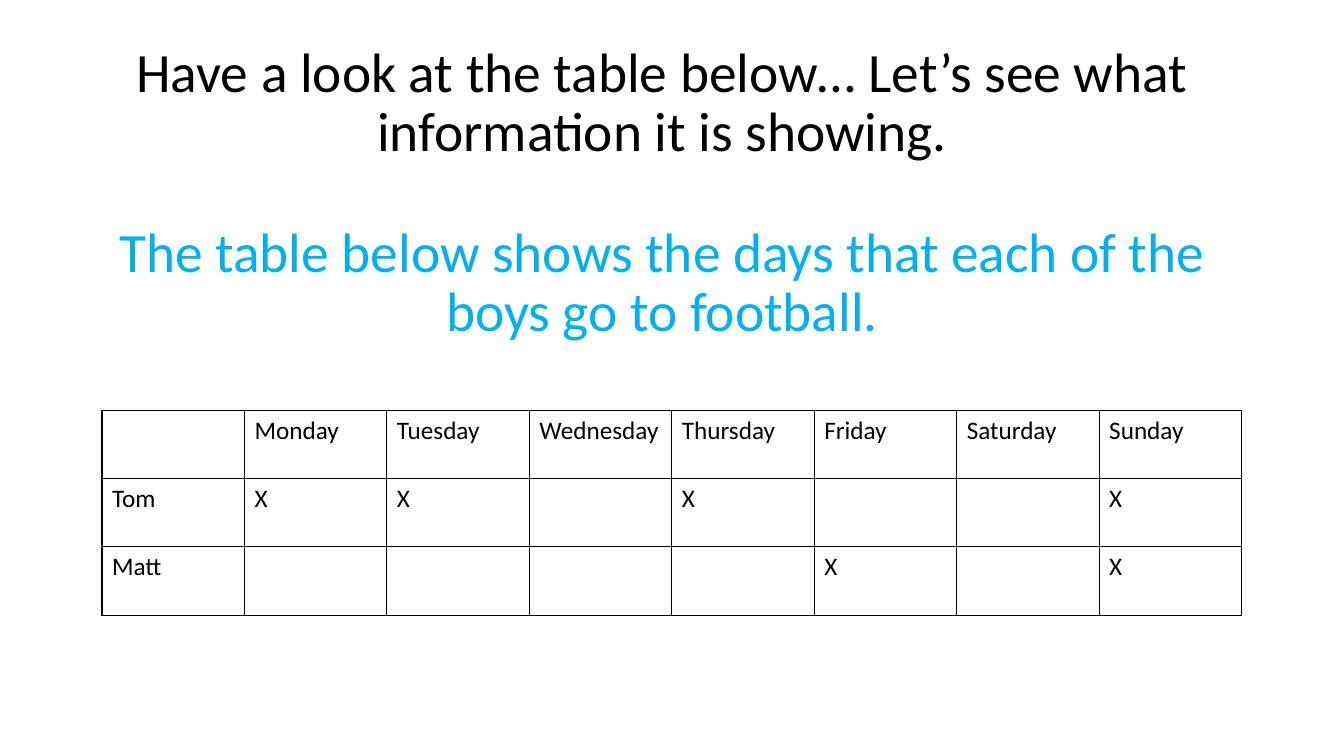
from lxml.etree import SubElement
from pptx import Presentation
from pptx.dml.color import RGBColor
from pptx.enum.text import MSO_ANCHOR, PP_ALIGN
from pptx.oxml.ns import qn
from pptx.util import Cm, Pt

BLACK = RGBColor(0x00, 0x00, 0x00)
SKY_BLUE = RGBColor(0x00, 0xB0, 0xF0)

DAYS = ["Monday", "Tuesday", "Wednesday", "Thursday", "Friday", "Saturday", "Sunday"]
FOOTBALL_DAYS = {
    "Tom": {"Monday", "Tuesday", "Thursday", "Sunday"},
    "Matt": {"Friday", "Sunday"},
}


class SlideBuilder:
    font_name = "Calibri"
    title_size = Pt(39.6)
    table_size = Pt(18)
    border_width = Pt(1)

    def __init__(self, slide):
        self.slide = slide

    def format_runs(self, paragraph, size, color):
        for run in paragraph.runs:
            run.font.name = self.font_name
            run.font.size = size
            run.font.color.rgb = color

    def add_title(self, left, top, width, height, lines):
        shape = self.slide.shapes.add_textbox(Cm(left), Cm(top), Cm(width), Cm(height))
        text_frame = shape.text_frame
        text_frame.word_wrap = True
        text_frame.vertical_anchor = MSO_ANCHOR.MIDDLE
        text_frame.text = "\n".join(text for text, color in lines)
        for index, (paragraph, (text, color)) in enumerate(zip(text_frame.paragraphs, lines)):
            paragraph.alignment = PP_ALIGN.CENTER
            paragraph.line_spacing = 0.9
            paragraph.space_before = Pt(43 if index else 0)
            self.format_runs(paragraph, self.title_size, color)

    def add_borders(self, cell):
        properties = cell._tc.get_or_add_tcPr()
        for index, side in enumerate(("a:lnL", "a:lnR", "a:lnT", "a:lnB")):
            line = SubElement(properties, qn(side), w=str(self.border_width))
            fill = SubElement(line, qn("a:solidFill"))
            SubElement(fill, qn("a:srgbClr"), val=str(BLACK))
            properties.insert(index, line)

    def add_table(self, left, top, column_width, row_height, rows):
        column_count = len(rows[0])
        table = self.slide.shapes.add_table(
            len(rows), column_count, Cm(left), Cm(top),
            Cm(column_width * column_count), Cm(row_height * len(rows)),
        ).table
        table.first_row = False
        table.horz_banding = False
        for column in table.columns:
            column.width = Cm(column_width)
        for row, texts in zip(table.rows, rows):
            row.height = Cm(row_height)
            for cell, text in zip(row.cells, texts):
                cell.fill.background()
                self.add_borders(cell)
                cell.text_frame.text = text
                self.format_runs(cell.text_frame.paragraphs[0], self.table_size, BLACK)


def main():
    presentation = Presentation()
    presentation.slide_width = Cm(33.87)
    presentation.slide_height = Cm(19.05)
    builder = SlideBuilder(presentation.slides.add_slide(presentation.slide_layouts[6]))
    builder.add_title(2.08, 3.05, 29.21, 3.68, [
        ("Have a look at the table below… Let’s see what information it is showing.", BLACK),
        ("The table below shows the days that each of the boys go to football.", SKY_BLUE),
    ])
    rows = [["", *DAYS]]
    for boy, attended in FOOTBALL_DAYS.items():
        rows.append([boy, *("X" if day in attended else "" for day in DAYS)])
    builder.add_table(2.57, 10.34, 3.59, 1.72, rows)
    presentation.save("out.pptx")


if __name__ == "__main__":
    main()
